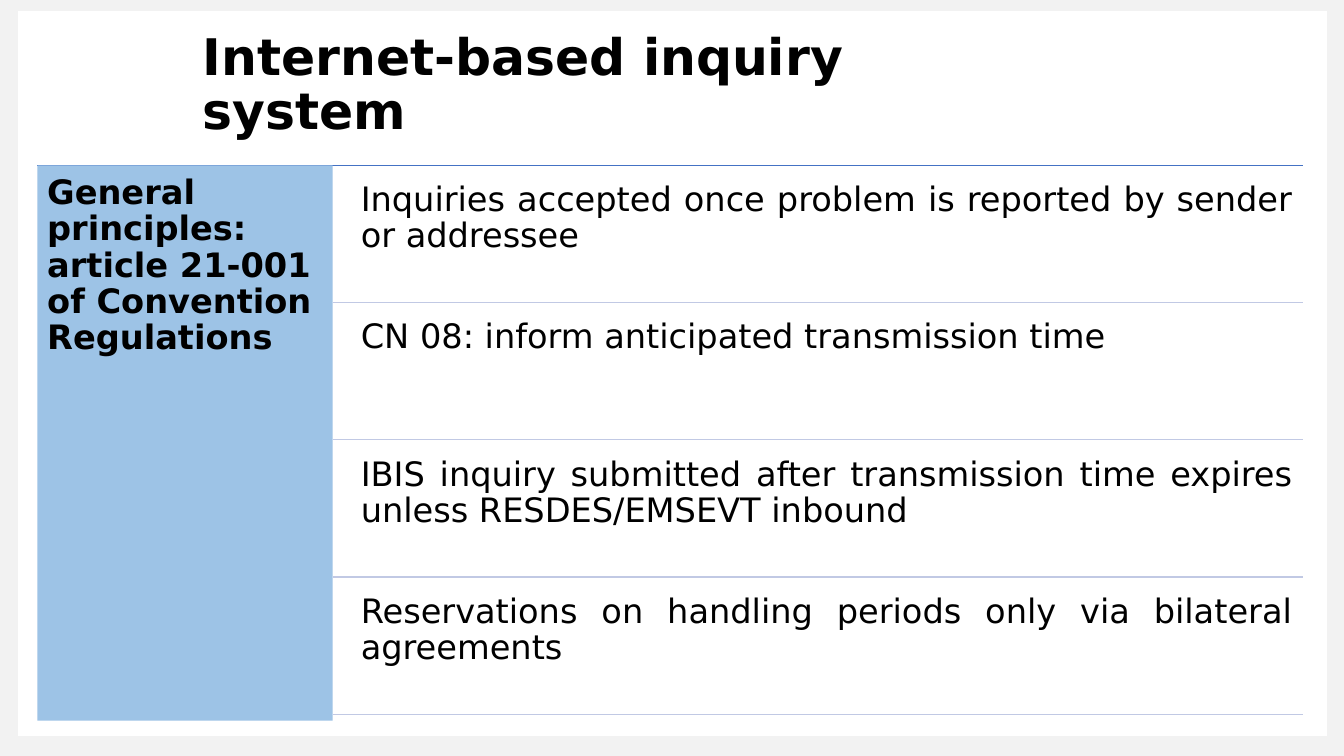
from lxml import etree
from pptx import Presentation
from pptx.dml.color import RGBColor
from pptx.enum import shapes as sh, text as tx
from pptx.oxml.ns import qn
from pptx.util import Inches, Pt

FONT = "DejaVu Sans"
LEFT, TOP, RIGHT = 0.37, 1.64, 12.92
SIDE = 2.93
STEP = 1.363
RULES = [
    "Inquiries accepted once problem is reported by sender or addressee",
    "CN 08: inform anticipated transmission time",
    "IBIS inquiry submitted after transmission time expires "
    "unless RESDES/EMSEVT inbound",
    "Reservations on handling periods only via bilateral agreements",
]


def color(code):
    return RGBColor.from_string(code)


def add_rect(slide, x, y, w, h, fill):
    rect = slide.shapes.add_shape(
        sh.MSO_SHAPE.RECTANGLE, Inches(x), Inches(y), Inches(w), Inches(h))
    rect.shadow.inherit = False
    rect.fill.solid()
    rect.fill.fore_color.rgb = color(fill)
    rect.line.fill.background()


def add_line(slide, x, y, end, code):
    line = slide.shapes.add_connector(
        sh.MSO_CONNECTOR.STRAIGHT, Inches(x), Inches(y), Inches(end), Inches(y))
    line.line.color.rgb = color(code)
    line.line.width = Pt(1)
    etree.SubElement(line._element.spPr, qn("a:effectLst"))


def add_text(slide, x, y, w, h, words, size=24, bold=False, pad=0.1,
             align=tx.PP_ALIGN.LEFT, anchor=tx.MSO_ANCHOR.TOP):
    box = slide.shapes.add_textbox(Inches(x), Inches(y), Inches(w), Inches(h))
    frame = box.text_frame
    frame.word_wrap = True
    frame.vertical_anchor = anchor
    frame.margin_left = frame.margin_right = Inches(0.1)
    frame.margin_top = frame.margin_bottom = Inches(pad)
    para = frame.paragraphs[0]
    para.alignment = align
    para.line_spacing = 0.9
    run = para.add_run()
    run.text = words
    run.font.name = FONT
    run.font.size = Pt(size)
    run.font.bold = bold
    run.font.color.rgb = color("000000")


def main():
    deck = Presentation()
    deck.slide_width, deck.slide_height = Inches(13.33), Inches(7.5)
    slide = deck.slides.add_slide(deck.slide_layouts[6])

    add_rect(slide, 0, 0, 13.33, 7.5, "F2F2F2")
    add_rect(slide, 0.18, 0.11, 12.98, 7.19, "FFFFFF")
    add_text(slide, 1.91, 0.54, 8.6, 0.63, "Internet-based inquiry system",
             size=36, bold=True, pad=0.05, anchor=tx.MSO_ANCHOR.MIDDLE)

    add_line(slide, LEFT, TOP, RIGHT, "4472C4")
    add_rect(slide, LEFT, TOP, SIDE, 5.51, "9DC3E6")
    add_text(slide, LEFT, TOP, SIDE, 5.51,
             "General principles: article 21-001 of Convention Regulations",
             bold=True)

    for i, rule in enumerate(RULES):
        y = 1.71 + i * STEP
        add_text(slide, 3.48, y, 9.44, 1.3, rule, align=tx.PP_ALIGN.JUSTIFY)
        add_line(slide, LEFT + SIDE, y + 1.29, RIGHT, "C1C9E4")

    deck.save("out.pptx")


if __name__ == "__main__":
    main()
